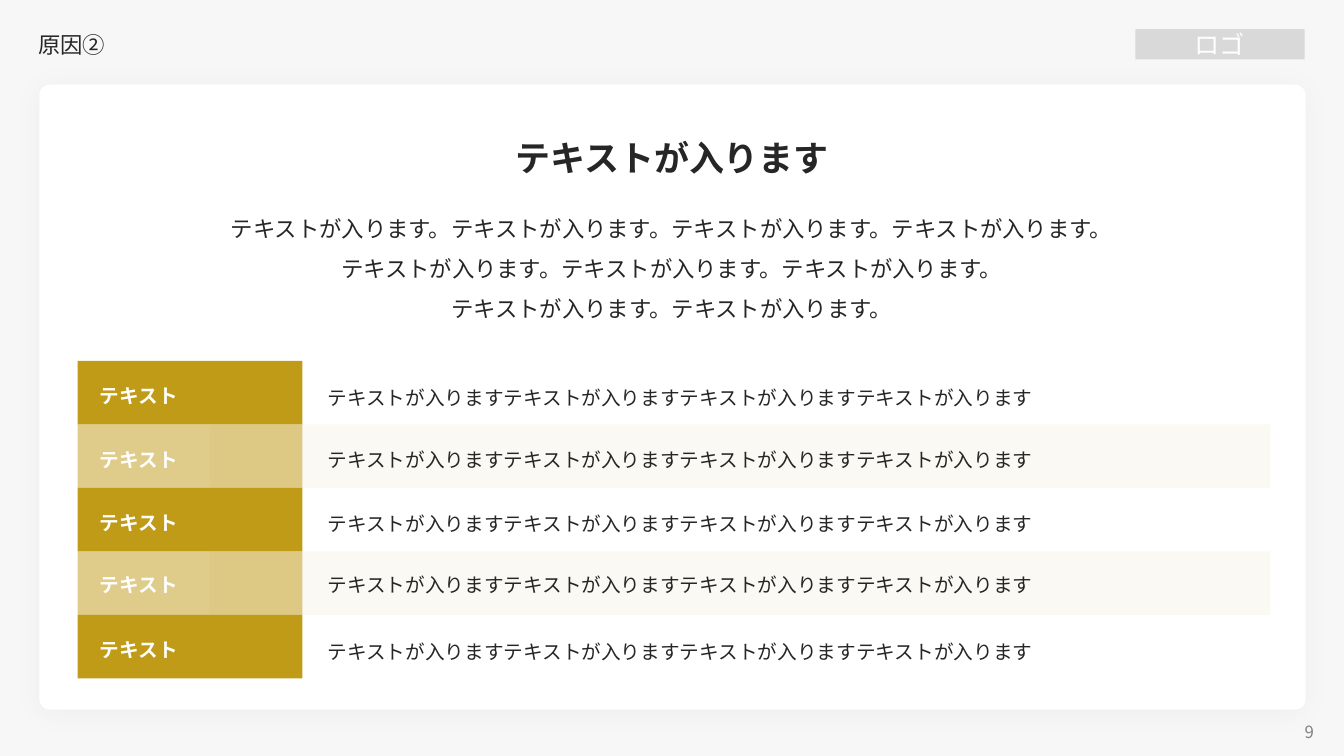
from dataclasses import dataclass

from lxml import etree
from pptx import Presentation
from pptx.dml.color import RGBColor
from pptx.enum.shapes import MSO_SHAPE
from pptx.enum.text import MSO_ANCHOR, PP_ALIGN
from pptx.oxml.ns import qn
from pptx.util import Inches, Pt

RECTANGLE, ROUNDED = MSO_SHAPE.RECTANGLE, MSO_SHAPE.ROUNDED_RECTANGLE
TOP, MIDDLE = MSO_ANCHOR.TOP, MSO_ANCHOR.MIDDLE
LEFT, CENTER, RIGHT = PP_ALIGN.LEFT, PP_ALIGN.CENTER, PP_ALIGN.RIGHT

SENTENCE = "テキストが入ります"
ROW_TOP, ROW_HEIGHT = 3.58, 0.63
LABEL_TOPS = [3.76, 4.39, 5.02, 5.63, 6.28]
DETAIL_TOPS = [3.78, 4.39, 5.03, 5.63, 6.3]


@dataclass(frozen=True)
class Theme:
    """Colours, font and type sizes of the deck."""
    font: str = "Noto Sans CJK JP"
    ink: str = "262626"
    white: str = "FFFFFF"
    backdrop: str = "F7F7F7"
    logo: str = "D9D9D9"
    muted: str = "808080"
    gold: str = "C09B17"
    shadow: str = "000000"
    headline: int = 25
    logo_size: int = 18
    lead: int = 16
    body: int = 14
    small: int = 12


def write_text(frame, text, *, font, size, color, bold=False, align=LEFT, anchor=TOP, spacing=None):
    """Fill a text frame, one paragraph for each line."""
    frame.word_wrap = True
    frame.vertical_anchor = anchor
    for index, line in enumerate(text.split("\n")):
        para = frame.add_paragraph() if index else frame.paragraphs[0]
        para.alignment = align
        para.line_spacing = spacing
        span = para.add_run()
        span.text = line
        span.font.name = font
        span.font.size = Pt(size)
        span.font.bold = bold
        span.font.color.rgb = RGBColor.from_string(color)
        east_asian = etree.SubElement(span.font._element, qn("a:ea"))
        east_asian.set("typeface", font)


class SlideBuilder:
    """Draws styled elements on the current slide."""

    def __init__(self, slide, theme):
        self.slide = slide
        self.theme = theme

    def block(self, left, top, width, height, color, opacity=100, kind=RECTANGLE):
        """Add a borderless filled shape."""
        box = self.slide.shapes.add_shape(kind, Inches(left), Inches(top), Inches(width), Inches(height))
        box.shadow.inherit = False
        box.line.fill.background()
        box.fill.solid()
        box.fill.fore_color.rgb = RGBColor.from_string(color)
        if opacity < 100:
            tint = box._element.spPr.find(qn("a:solidFill"))[0]
            etree.SubElement(tint, qn("a:alpha")).set("val", str(opacity * 1000))
        return box

    def card(self, left, top, width, height):
        """Add a white rounded card with a soft shadow."""
        box = self.block(left, top, width, height, self.theme.white, kind=ROUNDED)
        box.adjustments[0] = 0.017
        effects = box._element.spPr.find(qn("a:effectLst"))
        shadow = etree.SubElement(effects, qn("a:outerShdw"), blurRad=str(Pt(20)), dist=str(Pt(3)),
                                  dir="5400000", algn="t", rotWithShape="0")
        tint = etree.SubElement(shadow, qn("a:srgbClr"), val=self.theme.shadow)
        etree.SubElement(tint, qn("a:alpha"), val="3000")

    def text(self, left, top, width, height, text, size, color=None, **style):
        """Add a text box."""
        box = self.slide.shapes.add_textbox(Inches(left), Inches(top), Inches(width), Inches(height))
        write_text(box.text_frame, text, font=self.theme.font, size=size,
                   color=color or self.theme.ink, **style)

    def logo(self, left, top, width, height, text):
        """Add the logo placeholder."""
        box = self.block(left, top, width, height, self.theme.logo)
        write_text(box.text_frame, text, font=self.theme.font, size=self.theme.logo_size,
                   color=self.theme.white, align=CENTER, anchor=MIDDLE)

    def row(self, index, label_top, detail_top):
        """Add one row with its label and detail."""
        theme = self.theme
        top = ROW_TOP + index * ROW_HEIGHT
        shaded = index % 2 == 1
        if shaded:
            self.block(2.08, top, 10.52, ROW_HEIGHT, theme.gold, opacity=5)
        self.block(0.77, top, 2.23, ROW_HEIGHT, theme.gold, opacity=50 if shaded else 100)
        self.text(0.89, label_top, 2.11, 0.34, "テキスト", theme.body, theme.white, bold=True)
        self.text(3.15, detail_top, 9.45, 0.34, SENTENCE * 4, theme.body)


def main():
    """Build and save the deck."""
    deck = Presentation()
    deck.slide_width, deck.slide_height = Inches(13.33), Inches(7.5)
    theme = Theme()
    page = SlideBuilder(deck.slides.add_slide(deck.slide_layouts[6]), theme)

    page.block(0, 0, 13.33, 7.5, theme.backdrop)
    page.card(0.39, 0.84, 12.56, 6.2)
    page.text(10.02, 7.14, 3.11, 0.24, "9", theme.small, theme.muted, align=RIGHT, anchor=MIDDLE)
    page.logo(11.26, 0.29, 1.68, 0.3, "ロゴ")
    page.text(0.28, 0.25, 10, 0.41, "原因②", theme.lead, anchor=MIDDLE, spacing=0.9)
    page.text(1.19, 1.3, 10.95, 0.52, SENTENCE, theme.headline, bold=True, align=CENTER)
    lead = "\n".join((SENTENCE + "。") * count for count in (4, 3, 2))
    page.text(1.13, 1.95, 11.07, 1.27, lead, theme.lead, align=CENTER, spacing=1.5)
    for index, tops in enumerate(zip(LABEL_TOPS, DETAIL_TOPS)):
        page.row(index, *tops)

    deck.save("out.pptx")


if __name__ == "__main__":
    main()
